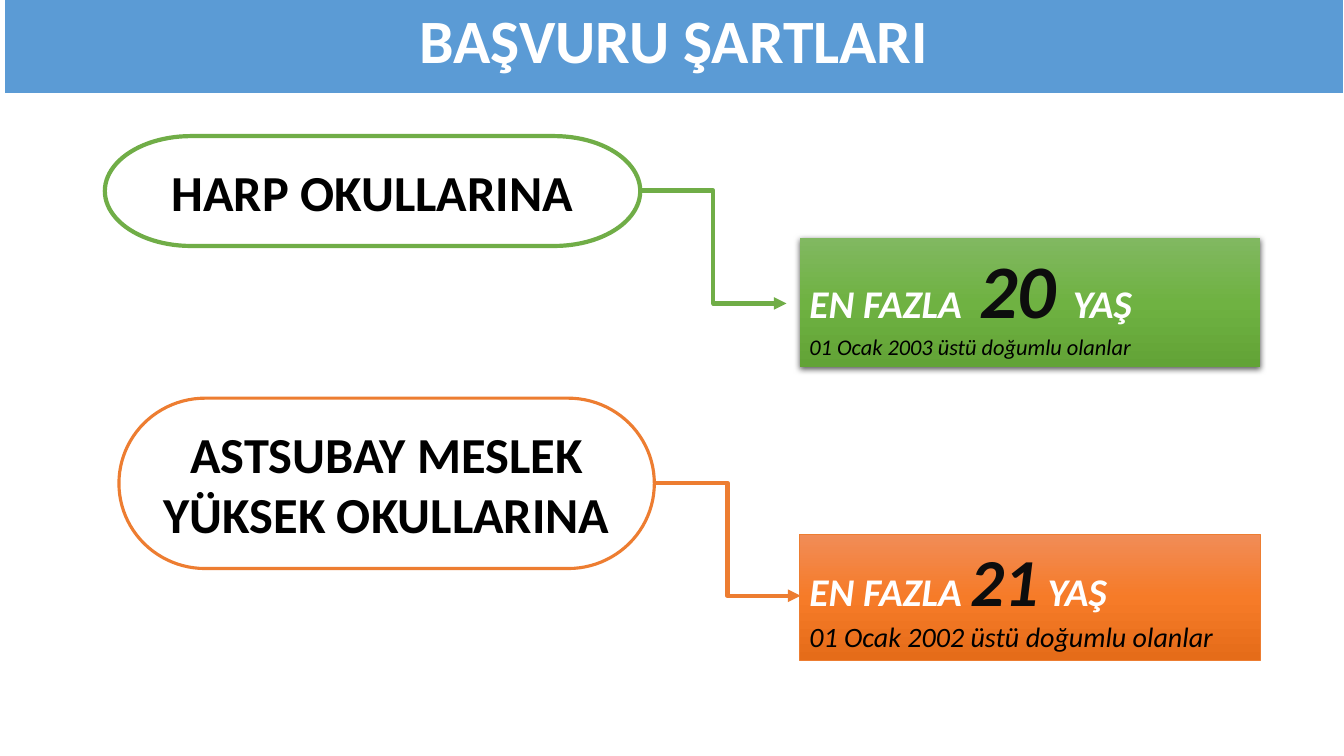
from copy import deepcopy
from dataclasses import dataclass

from lxml import etree
from pptx import Presentation
from pptx.dml.color import RGBColor
from pptx.enum.shapes import MSO_CONNECTOR, MSO_SHAPE
from pptx.enum.text import MSO_ANCHOR, MSO_AUTO_SIZE, PP_ALIGN
from pptx.oxml.ns import qn
from pptx.util import Pt

TERMINATOR = MSO_SHAPE.FLOWCHART_TERMINATOR
RECTANGLE = MSO_SHAPE.RECTANGLE
ELBOW = MSO_CONNECTOR.ELBOW
MIDDLE, TOP = MSO_ANCHOR.MIDDLE, MSO_ANCHOR.TOP
CENTER, LEFT = PP_ALIGN.CENTER, PP_ALIGN.LEFT
TITLE_ONLY = 5
PX = 9144  # 100 px to the inch


@dataclass(frozen=True)
class Theme:
    font: str = "Calibri"
    blue: str = "5B9BD5"
    green: str = "70AD47"
    orange: str = "ED7D31"
    white: str = "FFFFFF"
    black: str = "000000"
    number: str = "0D0D0D"
    green_blend: tuple = ("81B861", "6FB242", "62A336")
    orange_blend: tuple = ("F18C57", "F67B28", "E56C19")
    title_size: int = 44
    school_size: int = 36
    limit_size: int = 28


THEME = Theme()

# Content: boxes are left, top, width, height in px
PAGE_SIZE = (1333, 750)
TITLE = "BAŞVURU ŞARTLARI"
TITLE_BOX = (4, -6, 1329, 99)
ARROW_SIZE = (145, 112)
CONDITIONS = [
    {
        "school": "HARP OKULLARINA", "school_box": (104, 135, 531, 109),
        "school_fill": None, "outline": 3, "color": THEME.green,
        "limit_box": (793, 236, 457, 128), "blend": THEME.green_blend,
        "limit_outline": None, "shadow": True,
        "limit": [("EN FAZLA", THEME.limit_size, THEME.white),
                  (" ", 54, THEME.white),
                  ("20 ", 54, THEME.number),
                  ("YAŞ", THEME.limit_size, THEME.white)],
        "birth": ("01 Ocak 2003 üstü doğumlu olanlar", 16),
    },
    {
        "school": "ASTSUBAY MESLEK YÜKSEK OKULLARINA", "school_box": (118, 395, 531, 169),
        "school_fill": THEME.white, "outline": 2.25, "color": THEME.orange,
        "limit_box": (793, 530, 457, 125), "blend": THEME.orange_blend,
        "limit_outline": 0.5, "shadow": False,
        "limit": [("EN FAZLA ", THEME.limit_size, THEME.white),
                  ("21", 48, THEME.number),
                  (" YAŞ", THEME.limit_size, THEME.white)],
        "birth": ("01 Ocak 2002 üstü doğumlu olanlar", 20),
    },
]


def scaled(lengths):
    return [length * PX for length in lengths]


def set_line(line, color, width):
    if width is None:
        line.fill.background()
        return
    line.color.rgb = RGBColor.from_string(color)
    line.width = Pt(width)


def set_fill(fill, color):
    if color is None:
        fill.background()
    else:
        fill.solid()
        fill.fore_color.rgb = RGBColor.from_string(color)


def style_span(span, size, color, bold=True, italic=False):
    font = span.font
    font.name, font.size = THEME.font, Pt(size)
    font.bold, font.italic = bold, italic
    font.color.rgb = RGBColor.from_string(color)


def write_centered(shape, text, size, color):
    frame = shape.text_frame
    frame.text = text
    frame.word_wrap = True
    frame.auto_size = MSO_AUTO_SIZE.NONE
    frame.vertical_anchor = MIDDLE
    para = frame.paragraphs[0]
    para.alignment = CENTER
    style_span(para.runs[0], size, color)
    return para


def blend_down(shape, colors):
    shape.fill.gradient()
    shape.fill.gradient_angle = 270
    stops = shape._element.spPr.find(qn("a:gradFill")).find(qn("a:gsLst"))
    stops.insert(1, deepcopy(stops[0]))
    for index, (stop, color) in enumerate(zip(stops, colors)):
        stop.set("pos", str(index * 50000))
        stop.remove(stop[0])
        etree.SubElement(stop, qn("a:srgbClr"), val=color)


def add_shadow(shape):
    effects = shape._element.spPr.find(qn("a:effectLst"))
    outer = etree.SubElement(effects, qn("a:outerShdw"), blurRad=str(Pt(4.5)),
                             dist=str(Pt(1.5)), dir="5400000", rotWithShape="0")
    color = etree.SubElement(outer, qn("a:srgbClr"), val=THEME.black)
    etree.SubElement(color, qn("a:alpha"), val="63000")


def add_title(page):
    title = page.shapes.title
    title.left, title.top, title.width, title.height = scaled(TITLE_BOX)
    set_fill(title.fill, THEME.blue)
    set_line(title.line, THEME.white, 1.5)
    write_centered(title, TITLE, THEME.title_size, THEME.white).line_spacing = 0.9


def add_school(page, item):
    school = page.shapes.add_shape(TERMINATOR, *scaled(item["school_box"]))
    school.shadow.inherit = False
    set_fill(school.fill, item["school_fill"])
    set_line(school.line, item["color"], item["outline"])
    write_centered(school, item["school"], THEME.school_size, THEME.black)


def add_arrow(page, item):
    left, top, width, height = item["school_box"]
    start = (left + width, top + height // 2)
    end = (start[0] + ARROW_SIZE[0], start[1] + ARROW_SIZE[1])
    arrow = page.shapes.add_connector(ELBOW, *scaled(start + end))
    set_line(arrow.line, item["color"], 3)
    properties = arrow._element.spPr
    etree.SubElement(properties.find(qn("a:ln")), qn("a:tailEnd"), type="triangle")
    etree.SubElement(properties, qn("a:effectLst"))


def add_limit(page, item):
    box = page.shapes.add_shape(RECTANGLE, *scaled(item["limit_box"]))
    box.shadow.inherit = False
    blend_down(box, item["blend"])
    set_line(box.line, item["color"], item["limit_outline"])
    if item["shadow"]:
        add_shadow(box)
    frame = box.text_frame
    frame.word_wrap = True
    frame.auto_size = MSO_AUTO_SIZE.SHAPE_TO_FIT_TEXT
    frame.vertical_anchor = TOP
    limit = frame.paragraphs[0]
    for text, size, color in item["limit"]:
        span = limit.add_run()
        span.text = text
        style_span(span, size, color, italic=True)
    birth = frame.add_paragraph()
    birth.text, size = item["birth"]
    style_span(birth.runs[0], size, THEME.black, bold=False, italic=True)
    limit.alignment = birth.alignment = LEFT


def main():
    deck = Presentation()
    deck.slide_width, deck.slide_height = scaled(PAGE_SIZE)
    page = deck.slides.add_slide(deck.slide_layouts[TITLE_ONLY])
    add_title(page)
    for item in CONDITIONS:
        add_school(page, item)
        add_arrow(page, item)
        add_limit(page, item)
    deck.save("out.pptx")


if __name__ == "__main__":
    main()
